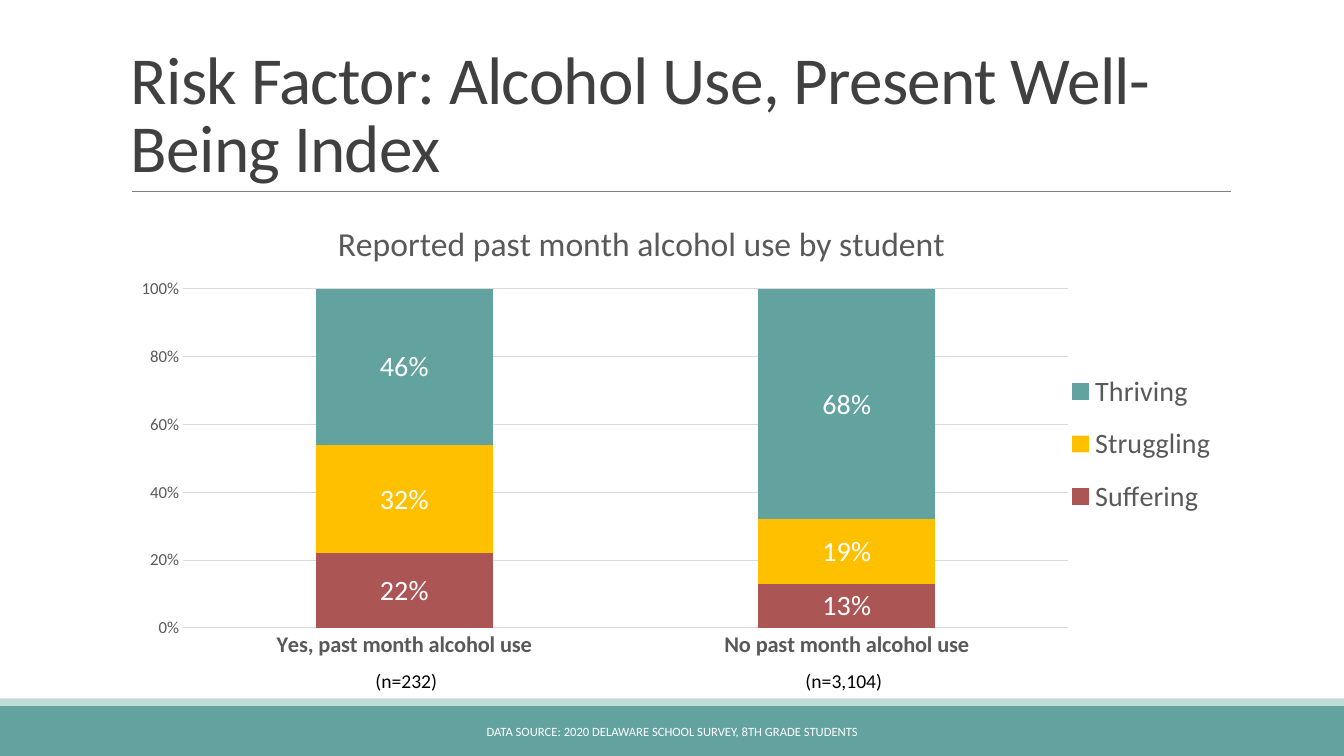
from lxml import etree
from pptx import Presentation
from pptx.chart.data import CategoryChartData
from pptx.dml.color import RGBColor
from pptx.enum.chart import XL_CHART_TYPE, XL_LABEL_POSITION, XL_LEGEND_POSITION, XL_TICK_MARK
from pptx.enum.shapes import MSO_CONNECTOR, MSO_SHAPE
from pptx.enum.text import MSO_ANCHOR, PP_ALIGN
from pptx.oxml.ns import qn
from pptx.util import Inches, Pt

STACKED = XL_CHART_TYPE.COLUMN_STACKED_100
LABEL_CENTER = XL_LABEL_POSITION.CENTER
LEGEND_RIGHT = XL_LEGEND_POSITION.RIGHT
NO_TICK = XL_TICK_MARK.NONE
STRAIGHT = MSO_CONNECTOR.STRAIGHT
RECTANGLE = MSO_SHAPE.RECTANGLE
TOP, MIDDLE, BOTTOM = MSO_ANCHOR.TOP, MSO_ANCHOR.MIDDLE, MSO_ANCHOR.BOTTOM
LEFT, CENTER = PP_ALIGN.LEFT, PP_ALIGN.CENTER

FONT = "Calibri"
TEAL, GRAY, GRID, WHITE = "62A39F", "595959", "D9D9D9", "FFFFFF"
WIDTH, HEIGHT = 13.33, 7.5

TITLE = "Risk Factor: Alcohol Use, Present Well-Being Index"
SOURCE = "DATA SOURCE: 2020 DELAWARE SCHOOL SURVEY, 8TH GRADE STUDENTS"
CHART_TITLE = "Reported past month alcohol use by student"
CATEGORIES = ["Yes, past month alcohol use", "No past month alcohol use"]
SERIES = [  # name, values, color, label size
    ("Suffering", (0.22, 0.13), "AB5555", 20),
    ("Struggling", (0.32, 0.19), "FFC000", 20),
    ("Thriving", (0.46, 0.68), TEAL, 20),
]
SAMPLE_SIZES = [("(n=232)", 3.51), ("(n=3,104)", 7.85)]
BANDS = [(7, 0.5, TEAL), (6.93, 0.07, "C0DAD8")]  # top, height, color


def color(hex_string):
    return RGBColor.from_string(hex_string)


def style_font(font, size, hex_string, bold=False):
    font.name, font.size, font.bold = FONT, Pt(size), bold
    font.color.rgb = color(hex_string)


def style_line(line, hex_string, width):
    line.color.rgb = color(hex_string)
    line.width = Pt(width)


def add_text(slide, text, box, size, hex_string, align=CENTER, anchor=TOP):
    shape = slide.shapes.add_textbox(*map(Inches, box))
    frame = shape.text_frame
    frame.word_wrap = True
    frame.vertical_anchor = anchor
    paragraph = frame.paragraphs[0]
    paragraph.text = text
    paragraph.alignment = align
    style_font(paragraph.font, size, hex_string)
    return paragraph


def place_in_chart(element, index, **position):
    """Give a chart part a manual layout in fractions of the chart area."""
    for old in element.findall(qn("c:layout")):
        element.remove(old)
    layout = etree.Element(qn("c:layout"))
    manual = etree.SubElement(layout, qn("c:manualLayout"))
    settings = {"xMode": "edge", "yMode": "edge", **position}
    for name, value in settings.items():
        etree.SubElement(manual, qn("c:" + name)).set("val", str(value))
    element.insert(index, layout)


def add_bands_and_rule(slide):
    for top, height, fill in BANDS:
        band = slide.shapes.add_shape(
            RECTANGLE, 0, Inches(top), Inches(WIDTH), Inches(height))
        band.shadow.inherit = False
        band.fill.solid()
        band.fill.fore_color.rgb = color(fill)
        band.line.fill.background()
    rule = slide.shapes.add_connector(
        STRAIGHT, Inches(1.31), Inches(1.9), Inches(12.21), Inches(1.9))
    style_line(rule.line, "808080", 0.5)
    etree.SubElement(rule._element.spPr, qn("a:effectLst"))


def add_wellbeing_chart(slide):
    data = CategoryChartData(number_format="0%")
    data.categories = CATEGORIES
    for name, values, _, _ in SERIES:
        data.add_series(name, values)
    chart = slide.shapes.add_chart(
        STACKED, Inches(1.2), Inches(1.84), Inches(11), Inches(4.84), data).chart
    style_font(chart.font, 10, "000000")

    title = chart.chart_title
    title.include_in_layout = False
    paragraph = title.text_frame.paragraphs[0]
    paragraph.text = CHART_TITLE
    style_font(paragraph.font, 24, GRAY)
    place_in_chart(title._element, 1, x=0.19, y=0.06)

    chart.has_legend = True
    legend = chart.legend
    legend.position = LEGEND_RIGHT
    legend.include_in_layout = False
    style_font(legend.font, 20, GRAY)
    place_in_chart(legend._element, 1, x=0.85, y=0.35, w=0.14, h=0.36)

    category_axis, value_axis = chart.category_axis, chart.value_axis
    for axis, size, bold in ((category_axis, 16, True), (value_axis, 12, False)):
        axis.major_tick_mark = axis.minor_tick_mark = NO_TICK
        style_font(axis.tick_labels.font, size, GRAY, bold)
    style_line(category_axis.format.line, GRID, 0.75)
    value_axis.format.line.fill.background()
    value_axis.minimum_scale, value_axis.maximum_scale = 0, 1
    value_axis.major_unit = 0.2
    value_axis.tick_labels.number_format = "0%"
    value_axis.tick_labels.number_format_is_linked = False
    style_line(value_axis.major_gridlines.format.line, GRID, 0.75)

    plot = chart.plots[0]
    plot.gap_width, plot.overlap = 150, 100
    plot.vary_by_categories = False
    for series, (_, _, fill, label_size) in zip(plot.series, SERIES):
        series.format.fill.solid()
        series.format.fill.fore_color.rgb = color(fill)
        labels = series.data_labels
        labels.show_value = True
        labels.position = LABEL_CENTER
        labels.number_format = "0%"
        labels.number_format_is_linked = False
        style_font(labels.font, label_size, WHITE)
    plot_area = chart._chartSpace.chart.plotArea
    place_in_chart(plot_area, 0, layoutTarget="inner",
                   x=0.056, y=0.212, w=0.798, h=0.695)
    manual = plot_area[0][0]
    manual.insert(0, manual.find(qn("c:layoutTarget")))


def main():
    presentation = Presentation()
    presentation.slide_width = Inches(WIDTH)
    presentation.slide_height = Inches(HEIGHT)
    slide = presentation.slides.add_slide(presentation.slide_layouts[6])

    add_bands_and_rule(slide)
    title = add_text(slide, TITLE, (1.2, 0.31, 11, 1.59), 48, "404040", LEFT, BOTTOM)
    title.line_spacing = 0.85
    title.runs[0].font._element.set("spc", "-50")
    add_wellbeing_chart(slide)
    add_text(slide, SOURCE, (4.03, 7.06, 5.27, 0.4), 9, WHITE, anchor=MIDDLE)
    for text, left in SAMPLE_SIZES:
        add_text(slide, text, (left, 6.59, 1.04, 0.34), 14, "000000")
    presentation.save("out.pptx")


if __name__ == "__main__":
    main()
